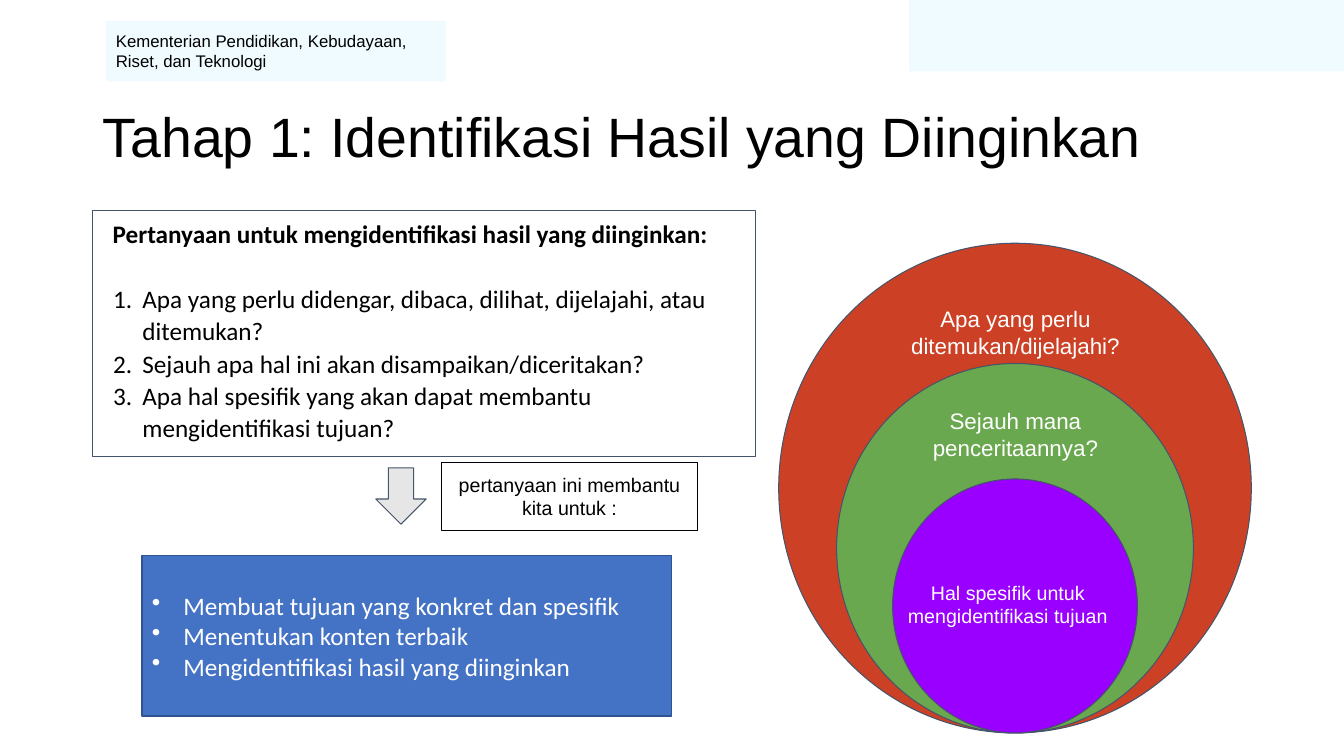
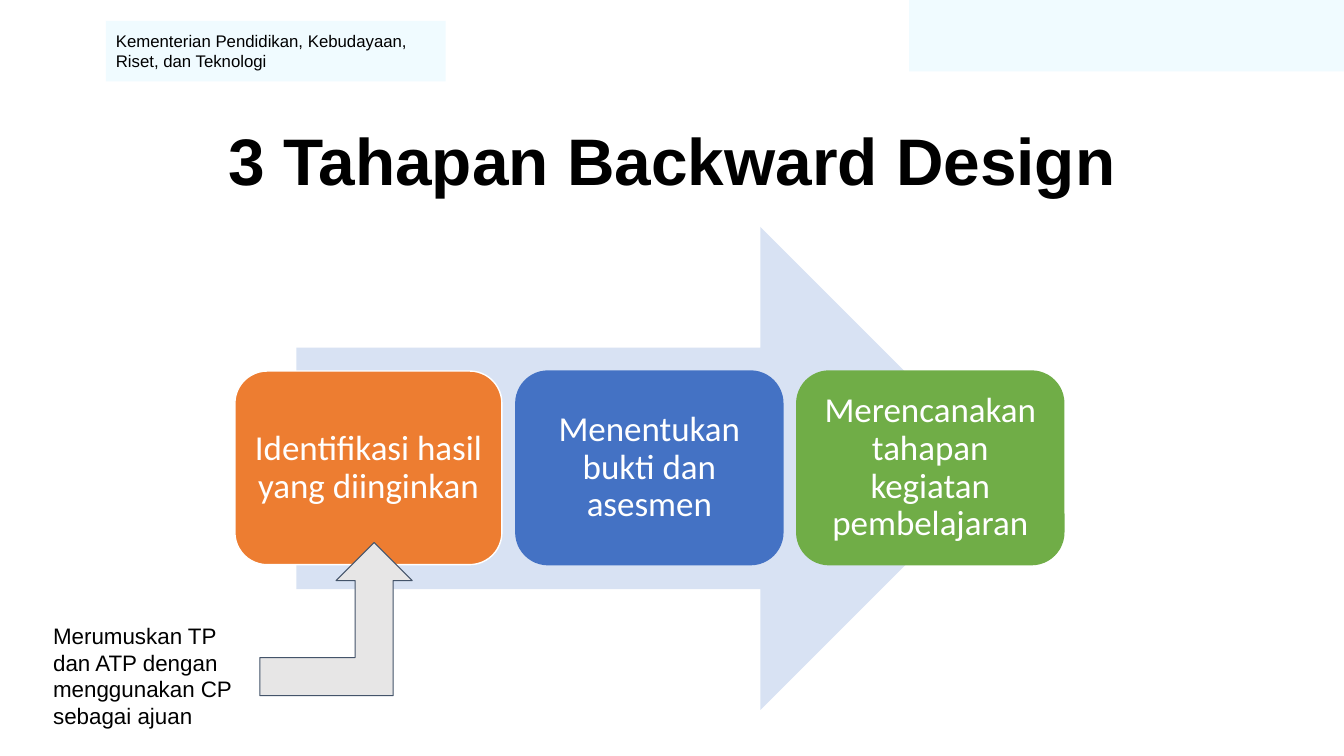
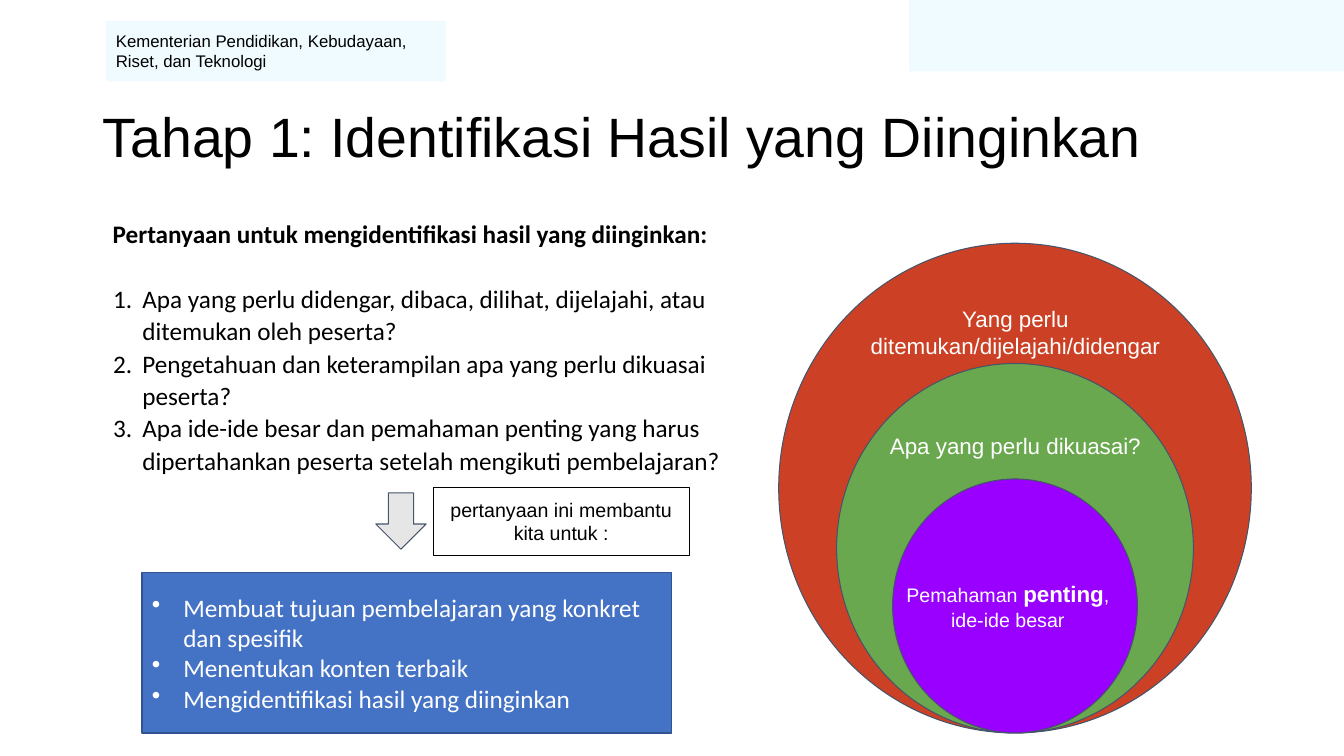
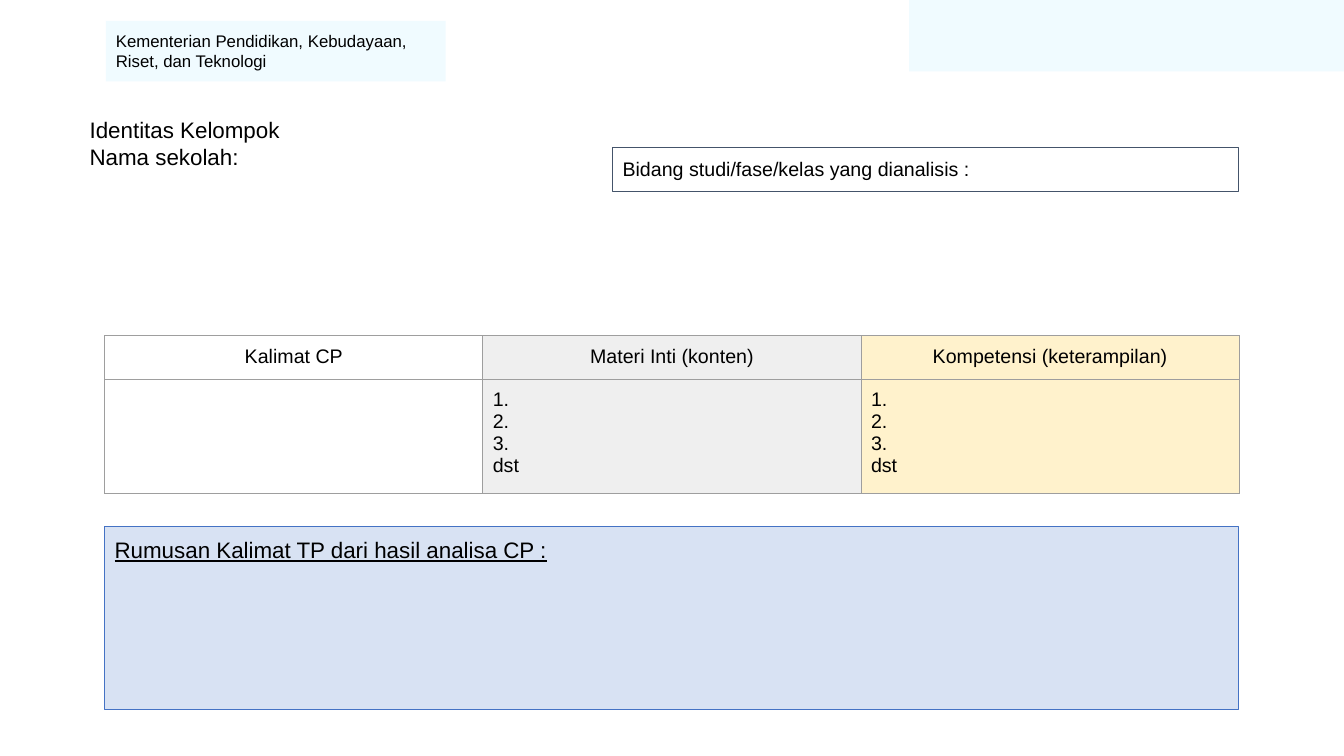
from dataclasses import dataclass

from lxml.etree import SubElement
from pptx import Presentation
from pptx.dml.color import RGBColor
from pptx.enum.shapes import MSO_SHAPE
from pptx.enum.text import MSO_ANCHOR, PP_ALIGN
from pptx.oxml import parse_xml
from pptx.oxml.ns import nsdecls, qn
from pptx.util import Cm, Pt


# Colours, fonts and type sizes
@dataclass(frozen=True)
class Theme:
    heading: str = "Arial"
    body: str = "Calibri"
    black: str = "000000"
    white: str = "FFFFFF"
    band: str = "F0FBFF"
    slate: str = "44546A"
    grey: str = "E7E6E6"
    blue: str = "4472C4"
    navy: str = "31538F"
    pale_blue: str = "D8E2F3"
    orange: str = "ED7D31"
    leaf: str = "70AD47"
    red: str = "CC4125"
    green: str = "6AA84F"
    purple: str = "9900FF"
    cell_grey: str = "EFEFEF"
    cell_yellow: str = "FFF2CC"
    border: str = "9E9E9E"
    title: float = 39.6
    cover: float = 47
    stage: float = 25
    list: float = 18
    text: float = 16
    small: float = 14
    tiny: float = 12


T = Theme()
RECT = MSO_SHAPE.RECTANGLE
CENTER = PP_ALIGN.CENTER
MIDDLE = MSO_ANCHOR.MIDDLE
STAGE_TITLE = "Tahap 1: Identifikasi Hasil yang Diinginkan"
NUMBER = ("buAutoNum", {"type": "arabicPeriod"})
DOT = ("buChar", {"char": "•"})


def rgb(value):
    return RGBColor.from_string(value)


# Text
def add_runs(p, runs, size, color=T.black, font=T.heading, **fmt):
    """Runs are one string, or (text, format) pairs."""
    for text, extra in [(runs, {})] if isinstance(runs, str) else runs:
        r = p.add_run()
        r.text = text
        r.font.color.rgb = rgb(color)
        values = {"name": font, "size": Pt(size), **fmt, **extra}
        for name, value in values.items():
            setattr(r.font, name, value)


def add_marker(p, marker, color, left, hang):
    pPr = p._p.get_or_add_pPr()
    pPr.set("marL", str(Cm(left)))
    pPr.set("indent", str(Cm(-hang)))
    if marker:
        SubElement(SubElement(pPr, qn("a:buClr")), qn("a:srgbClr"), val=color)
        tag, attrs = marker
        SubElement(pPr, qn("a:" + tag), **attrs)


def write(tf, lines, size, align=PP_ALIGN.LEFT, spacing=None, **fmt):
    for i, line in enumerate(lines):
        p = tf.paragraphs[0] if i == 0 else tf.add_paragraph()
        p.alignment = align
        if spacing:
            p.line_spacing = spacing
        add_runs(p, line, size, **fmt)


def setup_frame(tf, anchor=MSO_ANCHOR.TOP, pad_y=0.25):
    values = {"word_wrap": True, "vertical_anchor": anchor,
              "margin_left": Cm(0.25), "margin_right": Cm(0.25),
              "margin_top": Cm(pad_y), "margin_bottom": Cm(pad_y)}
    for name, value in values.items():
        setattr(tf, name, value)
    return tf


# Shapes
def add_shape(shapes, kind, box, fill=None, line=None, width=0.75):
    sp = shapes.add_shape(kind, *map(Cm, box))
    sp.shadow.inherit = False
    if fill:
        sp.fill.solid()
        sp.fill.fore_color.rgb = rgb(fill)
    else:
        sp.fill.background()
    if line:
        sp.line.color.rgb = rgb(line)
        sp.line.width = Pt(width)
    else:
        sp.line.fill.background()
    return sp


def add_text(shapes, box, lines, size, anchor=MSO_ANCHOR.TOP, pad_y=0.25, **fmt):
    tf = setup_frame(shapes.add_textbox(*map(Cm, box)).text_frame, anchor, pad_y)
    write(tf, lines, size, **fmt)


def add_panel(shapes, box, lines, size, fill=None, line=None,
              anchor=MSO_ANCHOR.TOP, **fmt):
    sp = add_shape(shapes, RECT, box, fill, line)
    write(setup_frame(sp.text_frame, anchor), lines, size, **fmt)


def add_title(s, text, top=1.96, size=T.title, **fmt):
    add_text(s.shapes, (2.34, top, 29.21, 3.1), [text], size, MIDDLE, 0.13,
             spacing=0.9, **fmt)


def add_slide(prs):
    """Blank slide with the shared corner band and ministry label."""
    s = prs.slides.add_slide(prs.slide_layouts[6])
    add_shape(s.shapes, RECT, (22.91, 0, 10.96, 1.8), T.band)
    add_panel(s.shapes, (2.67, 0.53, 8.56, 1.52),
              ["Kementerian Pendidikan, Kebudayaan, Riset, dan Teknologi"],
              T.tiny, T.band, anchor=MIDDLE)
    return s


# Parts of the stage slides
def add_questions(s, height, questions, line=None):
    sp = add_shape(s.shapes, RECT, (2.34, 5.31, 16.71, height), line=line)
    tf = setup_frame(sp.text_frame, pad_y=0.13)
    heading = "Pertanyaan untuk mengidentifikasi hasil yang diinginkan:"
    write(tf, [[(heading, {"bold": True})], *questions], T.list,
          spacing=1.07, font=T.body)
    head, *items = tf.paragraphs
    add_marker(head, None, T.black, 0.25, 0)
    for p in items:
        add_marker(p, NUMBER, T.black, 1, 0.74)
    items[0].space_before = Pt(23.5)


def add_goals(s, top, goals):
    sp = add_shape(s.shapes, RECT, (3.58, top, 13.34, 4.04), T.blue, T.navy, 1)
    tf = setup_frame(sp.text_frame, MIDDLE, 0.13)
    write(tf, goals, T.list, color=T.white, font=T.body)
    for p in tf.paragraphs:
        add_marker(p, DOT, T.white, 0.79, 0.79)


def add_helper(s, left, top):
    add_shape(s.shapes, MSO_SHAPE.DOWN_ARROW, (9.47, top + 0.13, 1.27, 1.42),
              T.grey, T.slate)
    add_panel(s.shapes, (left, top, 6.45, 1.7),
              ["pertanyaan ini membantu kita untuk :"], T.small,
              line=T.black, align=CENTER)


def add_rings(s, labels):
    """Nested circles resting on one point; labels are (top, runs)."""
    shapes = s.shapes.add_group_shape().shapes
    center, bottom = 25.58, 18.47
    rings = [(11.91, 12.34, T.red, 25.59, 7.95, T.text),
             (8.99, 9.31, T.green, 25.59, 7.54, T.text),
             (6.17, 6.4, T.purple, 25.4, 5.79, T.small)]
    for (w, h, fill, middle, label_w, size), (top, runs) in zip(rings, labels):
        add_shape(shapes, MSO_SHAPE.OVAL, (center - w / 2, bottom - h, w, h),
                  fill, T.slate)
        add_text(shapes, (middle - label_w / 2, top, label_w, 1.8), [runs],
                 size, align=CENTER, color=T.white)


# Table
def style_cell(cell, fill):
    if fill:
        cell.fill.solid()
        cell.fill.fore_color.rgb = rgb(fill)
    else:
        cell.fill.background()
    tcPr = cell._tc.get_or_add_tcPr()
    for i, side in enumerate("LRTB"):
        tcPr.insert(i, parse_xml(
            f'<a:ln{side} {nsdecls("a")} w="{Pt(0.75)}"><a:solidFill>'
            f'<a:srgbClr val="{T.border}"/></a:solidFill></a:ln{side}>'))
    for side in ("left", "right", "top", "bottom"):
        setattr(cell, "margin_" + side, Cm(0.25))


def add_grid(s, left, top, col_width, heights, columns):
    """Columns are (heading, lines, fill)."""
    frame = s.shapes.add_table(2, len(columns), Cm(left), Cm(top),
                               Cm(col_width * len(columns)), Cm(sum(heights)))
    table = frame.table
    table.first_row = table.horz_banding = False
    for row, height in zip(table.rows, heights):
        row.height = Cm(height)
    for c, (heading, lines, fill) in enumerate(columns):
        table.columns[c].width = Cm(col_width)
        for r, (content, align) in enumerate([([heading], CENTER),
                                              (lines, PP_ALIGN.LEFT)]):
            cell = table.cell(r, c)
            style_cell(cell, fill)
            write(cell.text_frame, content, T.small, align)


# Slides
def questions_slide(prs):
    s = add_slide(prs)
    add_questions(s, 6.2, [
        "Apa yang perlu didengar, dibaca, dilihat, dijelajahi, atau ditemukan?",
        "Sejauh apa hal ini akan disampaikan/diceritakan?",
        "Apa hal spesifik yang akan dapat membantu mengidentifikasi tujuan?",
    ], T.slate)
    add_title(s, STAGE_TITLE)
    add_goals(s, 14, ["Membuat tujuan yang konkret dan spesifik",
                      "Menentukan konten terbaik",
                      "Mengidentifikasi hasil yang diinginkan"])
    add_rings(s, [(7.44, "Apa yang perlu ditemukan/dijelajahi?"),
                  (10.01, "Sejauh mana penceritaannya?"),
                  (14.38, "Hal spesifik untuk mengidentifikasi tujuan")])
    add_helper(s, 11.13, 11.66)


def stages_slide(prs):
    s = add_slide(prs)
    add_title(s, "3 Tahapan Backward Design", 2.59, T.cover,
              align=CENTER, bold=True)
    shapes = s.shapes.add_group_shape().shapes
    add_shape(shapes, MSO_SHAPE.RIGHT_ARROW, (7.47, 5.72, 17.78, 12.17),
              T.pale_blue)
    stages = [("Identifikasi hasil yang diinginkan", T.orange, T.white),
              ("Menentukan bukti dan asesmen", T.blue, T.blue),
              ("Merencanakan tahapan kegiatan pembelajaran", T.leaf, T.leaf)]
    for i, (text, fill, line) in enumerate(stages):
        sp = add_shape(shapes, MSO_SHAPE.ROUNDED_RECTANGLE,
                       (5.92 + 7.08 * i, 9.35, 6.73, 4.88), fill, line, 1)
        tf = setup_frame(sp.text_frame, MIDDLE)
        tf.margin_left = tf.margin_right = Cm(0.2)
        write(tf, [text], T.stage, CENTER, 0.9, color=T.white, font=T.body)
    add_text(s.shapes, (1.09, 15.42, 5.23, 3.25),
             ["Merumuskan TP dan ATP dengan menggunakan CP sebagai ajuan"],
             T.text)
    add_shape(s.shapes, MSO_SHAPE.BENT_UP_ARROW, (6.55, 13.67, 3.84, 3.86),
              T.grey, T.slate)


def learning_slide(prs):
    s = add_slide(prs)
    add_title(s, STAGE_TITLE)
    add_questions(s, 8.23, [
        "Apa yang perlu didengar, dibaca, dilihat, dijelajahi, atau ditemukan "
        "oleh peserta?",
        "Pengetahuan dan keterampilan apa yang perlu dikuasai peserta?",
        "Apa ide-ide besar dan pemahaman penting yang harus dipertahankan "
        "peserta setelah mengikuti pembelajaran?",
    ])
    add_goals(s, 14.43, ["Membuat tujuan pembelajaran yang konkret dan spesifik",
                         "Menentukan konten terbaik",
                         "Mengidentifikasi hasil yang diinginkan"])
    key_idea = [("Pemahaman ", {}),
                ("penting", {"size": Pt(T.text), "bold": True}),
                (", ide-ide besar", {})]
    add_rings(s, [(7.44, "Yang perlu ditemukan/dijelajahi/didengar"),
                  (10.64, "Apa yang perlu dikuasai?"),
                  (14.38, key_idea)])
    add_helper(s, 10.92, 12.29)


def worksheet_slide(prs):
    s = add_slide(prs)
    entries = ["1.", "2.", "3.", "dst"]
    add_grid(s, 2.64, 8.46, 9.53, (1.06, 2.74), [
        ("Kalimat CP", [], None),
        ("Materi Inti (konten)", entries, T.cell_grey),
        ("Kompetensi (keterampilan)", entries, T.cell_yellow)])
    add_panel(s.shapes, (2.64, 13.26, 28.58, 4.62),
              ["Rumusan Kalimat TP dari hasil analisa CP :"], T.text,
              T.pale_blue, T.blue, underline=True)
    add_text(s.shapes, (2.01, 2.67, 11.53, 4.62),
             ["Identitas Kelompok", "Nama sekolah:"], T.text)
    add_panel(s.shapes, (15.44, 3.71, 15.77, 1.12),
              ["Bidang studi/fase/kelas yang dianalisis :"], T.small,
              line=T.slate)


def main():
    prs = Presentation()
    prs.slide_width, prs.slide_height = Cm(33.87), Cm(19.05)
    for build in (questions_slide, stages_slide, learning_slide, worksheet_slide):
        build(prs)
    prs.save("out.pptx")


if __name__ == "__main__":
    main()
